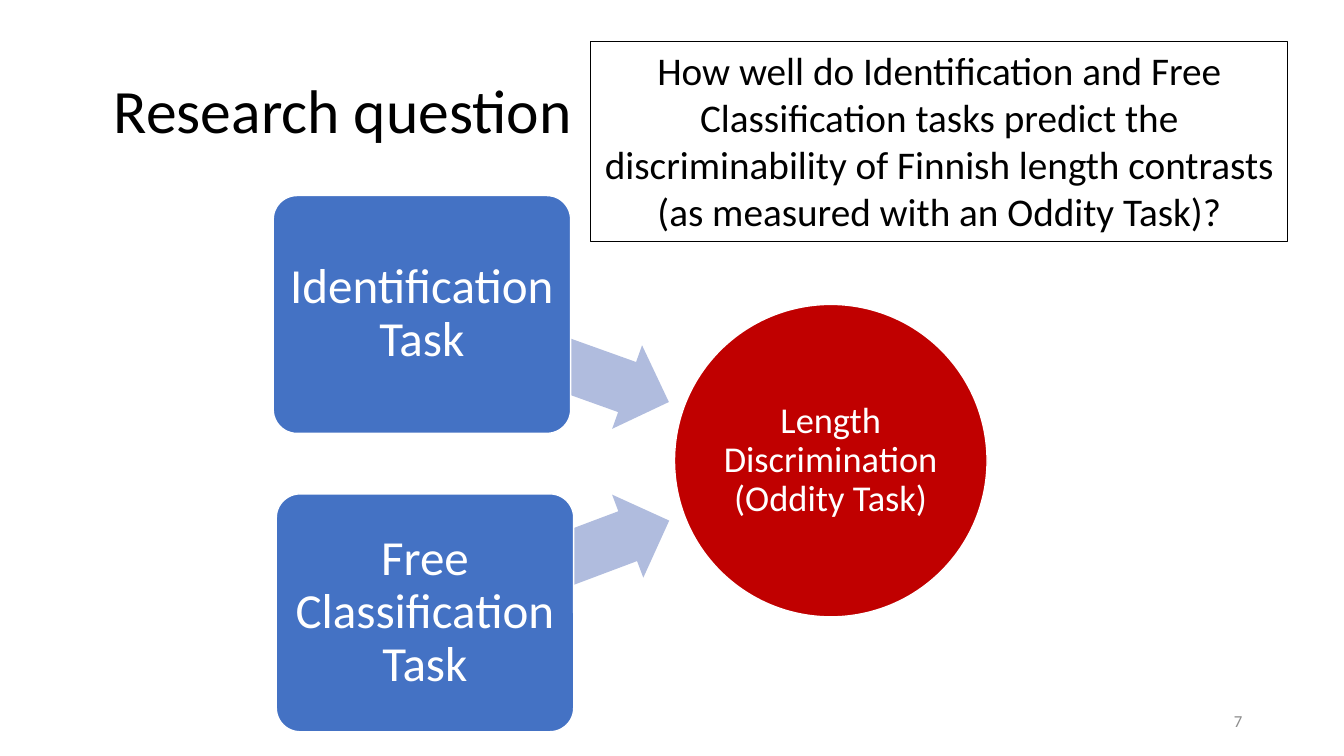
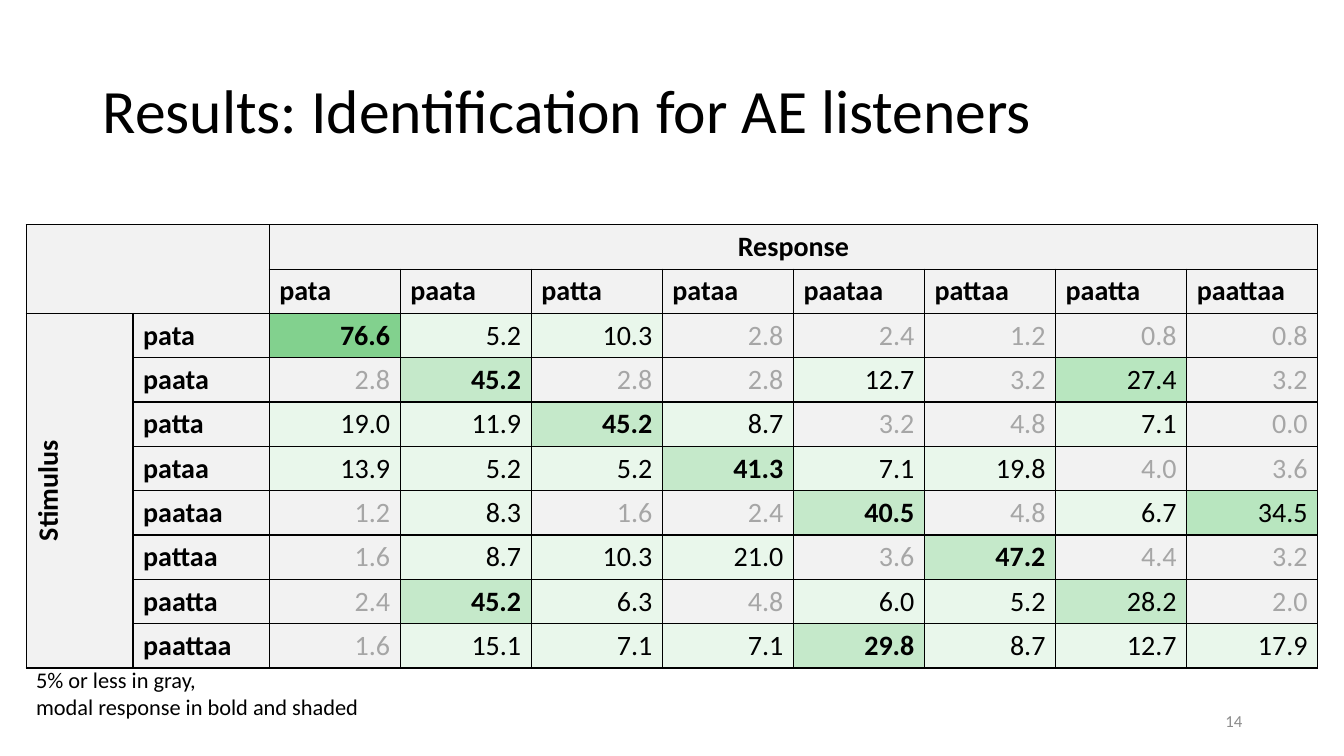
from dataclasses import dataclass

from lxml.etree import SubElement as Sub
from pptx import Presentation as Deck
from pptx.dml.color import RGBColor as Rgb
from pptx.enum.shapes import MSO_SHAPE as Form
from pptx.enum.text import MSO_ANCHOR as Anchor, PP_ALIGN as Align
from pptx.oxml.ns import qn
from pptx.util import Pt

PX = 9144


@dataclass(frozen=True)
class Theme:
    font: str = "Calibri"
    black: str = "000000"
    white: str = "FFFFFF"
    gray: str = "8C8C8C"
    faint: str = "A6A6A6"
    plain: str = "F2F2F2"
    blue: str = "4472C4"
    pale: str = "B0BCDE"
    red: str = "C00000"
    low: str = "E9F7EB"
    mid: str = "C5E9CA"
    rival: str = "B8E6BF"
    high: str = "82D18E"
    title: int = 44
    task: int = 35
    query: int = 28
    goal: int = 26
    cell: int = 20
    note: int = 16
    page: int = 12


T = Theme()

WORDS = ["pata", "paata", "patta", "pataa", "paataa", "pattaa", "paatta", "paattaa"]
RATES = [
    [76.6, 5.2, 10.3, 2.8, 2.4, 1.2, 0.8, 0.8],
    [2.8, 45.2, 2.8, 2.8, 12.7, 3.2, 27.4, 3.2],
    [19.0, 11.9, 45.2, 8.7, 3.2, 4.8, 7.1, 0.0],
    [13.9, 5.2, 5.2, 41.3, 7.1, 19.8, 4.0, 3.6],
    [1.2, 8.3, 1.6, 2.4, 40.5, 4.8, 6.7, 34.5],
    [1.6, 8.7, 10.3, 21.0, 3.6, 47.2, 4.4, 3.2],
    [2.4, 45.2, 6.3, 4.8, 6.0, 5.2, 28.2, 2.0],
    [1.6, 15.1, 7.1, 7.1, 29.8, 8.7, 12.7, 17.9],
]


def emu(*sizes):
    return [size * PX for size in sizes]


def tint(fill, color):
    fill.solid()
    fill.fore_color.rgb = Rgb.from_string(color)


def write(frame, lines, size, color=T.black, bold=False, align=Align.LEFT, lead=1.0):
    frame.word_wrap = True
    for num, line in enumerate(lines):
        para = frame.paragraphs[0] if num == 0 else frame.add_paragraph()
        para.alignment = align
        para.line_spacing = lead
        run = para.add_run()
        run.text = line
        font = run.font
        font.name, font.size, font.bold = T.font, Pt(size), bold
        font.color.rgb = Rgb.from_string(color)


def label(slide, box, lines, size, anchor=Anchor.TOP, **style):
    frame = slide.shapes.add_textbox(*emu(*box)).text_frame
    frame.vertical_anchor = anchor
    write(frame, lines, size, **style)


def block(slide, form, box, fill=None, line=None, width=1):
    shape = slide.shapes.add_shape(form, *emu(*box))
    shape.shadow.inherit = False
    if fill:
        tint(shape.fill, fill)
    else:
        shape.fill.background()
    if line:
        tint(shape.line.fill, line)
        shape.line.width = Pt(width)
    else:
        shape.line.fill.background()
    return shape


def node(slide, form, box, fill, text, size, inset):
    shape = block(slide, form, box, fill, T.white)
    frame = shape.text_frame
    frame.margin_left = frame.margin_right = inset * PX
    frame.margin_top = frame.margin_bottom = inset * PX
    frame.vertical_anchor = Anchor.MIDDLE
    write(frame, [text], size, T.white, align=Align.CENTER, lead=0.9)
    return shape


def arrow(slide, box, turn):
    shape = block(slide, Form.LEFT_ARROW, box, T.pale)
    shape.adjustments[0] = 0.6
    shape.rotation = turn


def start(deck, title, left, page):
    slide = deck.slides.add_slide(deck.slide_layouts[6])
    label(slide, (left, 40, 1242 - left, 145), [title], T.title,
          Anchor.MIDDLE, lead=0.9)
    label(slide, (942, 695, 300, 40), [str(page)], T.page, Anchor.MIDDLE,
          color=T.gray, align=Align.RIGHT)
    return slide


def edge(cell):
    props = cell._tc.get_or_add_tcPr()
    for side in ("lnL", "lnR", "lnT", "lnB"):
        line = Sub(props, qn(f"a:{side}"), w=str(Pt(1)))
        fill = Sub(line, qn("a:solidFill"))
        Sub(fill, qn("a:srgbClr"), val=T.black)


def put(cell, text, anchor=Anchor.BOTTOM, **style):
    cell.vertical_anchor = anchor
    write(cell.text_frame, [text], T.cell, **style)


def shade(rate, modal, match):
    if rate <= 5:
        return T.plain
    if rate <= 25:
        return T.low
    if rate > 60:
        return T.high
    return T.mid if modal or match else T.rival


def grid(slide):
    count = len(WORDS) + 2
    frame = slide.shapes.add_table(count, count, *emu(26, 223, 1281, 440))
    table = frame.table
    table.first_row = table.horz_banding = False
    for num in range(count):
        table.rows[num].height = 44 * PX
        table.columns[num].width = ([106, 135] + [130] * len(WORDS))[num] * PX
    for cell in table.iter_cells():
        edge(cell)
        tint(cell.fill, T.plain)
    at = table.cell
    at(0, 0).merge(at(1, 1))
    at(0, 2).merge(at(0, count - 1))
    at(2, 0).merge(at(count - 1, 0))
    put(at(0, 2), "Response", bold=True, align=Align.CENTER)
    put(at(2, 0), "Stimulus", Anchor.MIDDLE, bold=True, align=Align.CENTER)
    at(2, 0)._tc.get_or_add_tcPr().set("vert", "vert270")
    for row, (word, rates) in enumerate(zip(WORDS, RATES)):
        put(at(1, row + 2), word, bold=True)
        put(at(row + 2, 1), word, bold=True)
        for col, rate in enumerate(rates):
            cell = at(row + 2, col + 2)
            modal = rate == max(rates)
            tint(cell.fill, shade(rate, modal, row == col))
            put(cell, f"{rate:.1f}", color=T.faint if rate <= 5 else T.black,
                bold=modal, align=Align.RIGHT)


def question(deck):
    slide = start(deck, "Research question", 103, 7)
    node(slide, Form.OVAL, (669, 302, 310, 310), T.red,
         "Length Discrimination (Oddity Task)", T.goal, 2)
    tasks = [
        ("Identification Task", 271, 194, (411, 311, 260, 88), 199.7),
        ("Free Classification Task", 274, 490, (413, 518, 259, 88), 159.4),
    ]
    for text, left, top, box, turn in tasks:
        arrow(slide, box, turn)
        task = node(slide, Form.ROUNDED_RECTANGLE, (left, top, 295, 236),
                    T.blue, text, T.task, 7)
        task.adjustments[0] = 0.1
    query = block(slide, Form.RECTANGLE, (586, 41, 691, 199), line=T.black, width=0.75)
    query.text_frame.vertical_anchor = Anchor.TOP
    write(query.text_frame, [
        "How well do Identification and Free Classification tasks predict the "
        "discriminability of Finnish length contrasts "
        "(as measured with an Oddity Task)?"
    ], T.query, align=Align.CENTER)


def results(deck):
    slide = start(deck, "Results: Identification for AE listeners", 92, 14)
    grid(slide)
    label(slide, (26, 656, 360, 64),
          ["5% or less in gray,", "modal response in bold and shaded"], T.note)


def main():
    deck = Deck()
    deck.slide_width, deck.slide_height = emu(1333, 750)
    question(deck)
    results(deck)
    deck.save("out.pptx")


if __name__ == "__main__":
    main()
